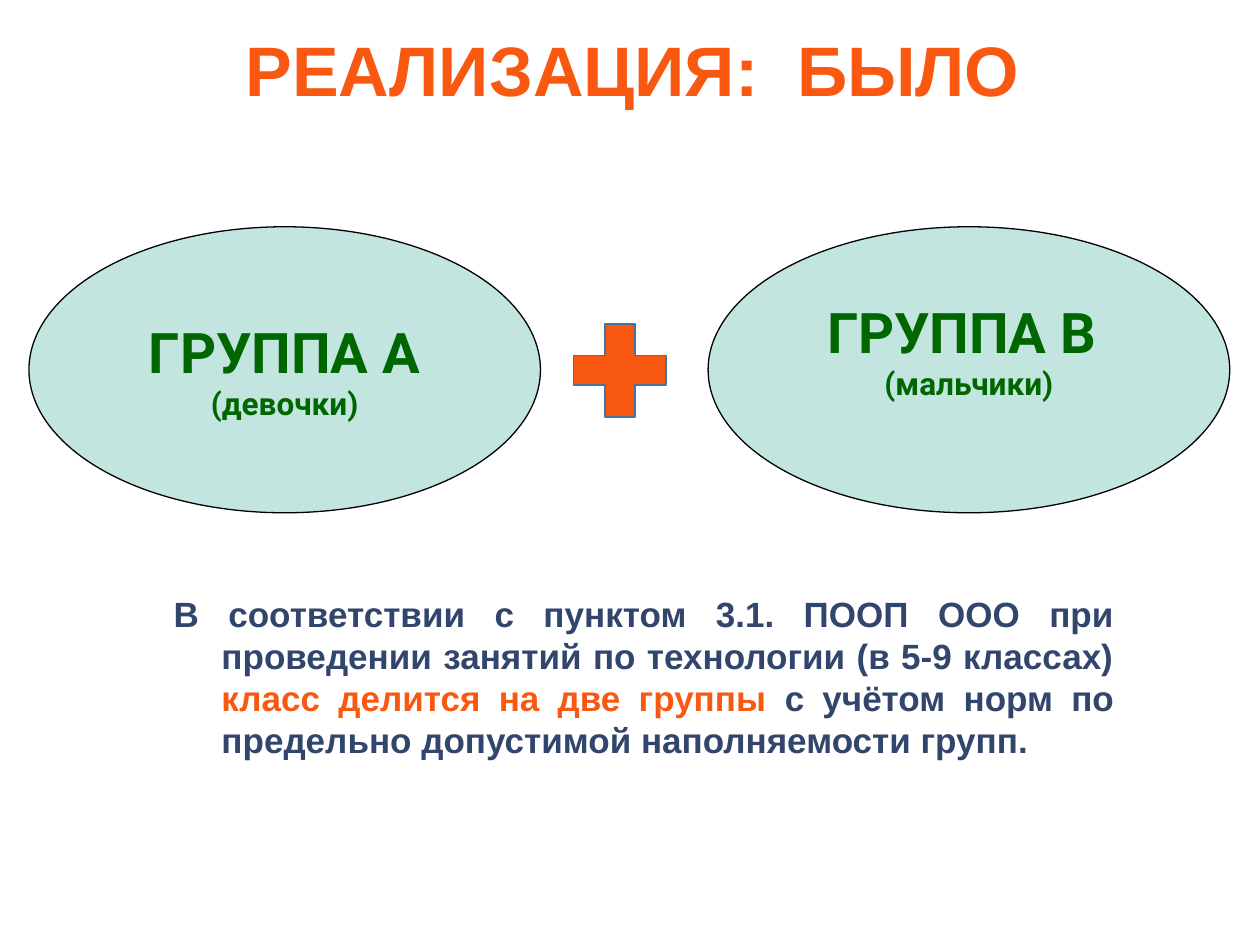
from dataclasses import dataclass

from pptx import Presentation
from pptx.dml.color import RGBColor
from pptx.enum.shapes import MSO_SHAPE
from pptx.enum.text import MSO_ANCHOR, PP_ALIGN
from pptx.oxml.ns import qn
from pptx.util import Inches, Pt
from lxml import etree

ELLIPSE = MSO_SHAPE.OVAL
PLUS = MSO_SHAPE.MATH_PLUS
TOP, MIDDLE = MSO_ANCHOR.TOP, MSO_ANCHOR.MIDDLE
CENTER, JUSTIFY = PP_ALIGN.CENTER, PP_ALIGN.JUSTIFY


@dataclass(frozen=True)
class Theme:
    orange: str = "F85810"
    navy: str = "32456C"
    green: str = "006600"
    teal: str = "06947C"
    black: str = "000000"
    plus_outline: str = "43739E"
    text_font: str = "Arial"
    group_font: str = "Roboto"
    title_size: int = 40
    group_size: int = 32
    note_size: int = 18
    body_size: int = 20


@dataclass(frozen=True)
class Group:
    name: str
    members: str
    left: float
    width: float
    bottom_inset: float


THEME = Theme()
GROUP_TOP, GROUP_HEIGHT = 1.8, 2.27
GROUPS = [
    Group("ГРУППА А", "(девочки)", 0.23, 4.06, 0.05),
    Group("ГРУППА В ", "(мальчики)", 5.62, 4.14, 0.37),
]
RULE_TEXT = [
    ("В соответствии с пунктом 3.1. ПООП ООО при проведении занятий "
     "по технологии (в 5-9 классах) ", THEME.navy),
    ("класс делится на две группы ", THEME.orange),
    ("с учётом норм по предельно допустимой наполняемости групп.", THEME.navy),
]


def add_run(paragraph, text: str, *, size: int, color: str, font: str) -> None:
    run = paragraph.add_run()
    run.text = text
    run.font.name = font
    run.font.size = Pt(size)
    run.font.bold = True
    run.font.color.rgb = RGBColor.from_string(color)


def add_shape(slide, kind, left: float, top: float, width: float, height: float,
              *, fill: str, line: str, line_width: float, opacity: int = 100):
    shape = slide.shapes.add_shape(
        kind, Inches(left), Inches(top), Inches(width), Inches(height))
    shape.shadow.inherit = False
    shape.fill.solid()
    shape.fill.fore_color.rgb = RGBColor.from_string(fill)
    shape.line.color.rgb = RGBColor.from_string(line)
    shape.line.width = Pt(line_width)
    if opacity < 100:
        color = shape.fill._xPr.find(qn("a:solidFill"))[0]
        etree.SubElement(color, qn("a:alpha"), val=str(opacity * 1000))
    return shape


def add_group(slide, group: Group) -> None:
    shape = add_shape(slide, ELLIPSE, group.left, GROUP_TOP, group.width, GROUP_HEIGHT,
                      fill=THEME.teal, line=THEME.black, line_width=0.75, opacity=24)
    frame = shape.text_frame
    frame.word_wrap = False
    frame.vertical_anchor = MIDDLE
    frame.margin_bottom = Inches(group.bottom_inset)
    name, members = frame.paragraphs[0], frame.add_paragraph()
    for paragraph, text, size in ((name, group.name, THEME.group_size),
                                  (members, group.members, THEME.note_size)):
        paragraph.alignment = CENTER
        add_run(paragraph, text, size=size, color=THEME.green, font=THEME.group_font)


def add_text(slide, left: float, top: float, width: float, height: float,
             parts: list[tuple[str, str]], *, size: int, alignment, anchor):
    box = slide.shapes.add_textbox(
        Inches(left), Inches(top), Inches(width), Inches(height))
    frame = box.text_frame
    frame.word_wrap = True
    frame.vertical_anchor = anchor
    paragraph = frame.paragraphs[0]
    paragraph.alignment = alignment
    for text, color in parts:
        add_run(paragraph, text, size=size, color=color, font=THEME.text_font)
    return paragraph


def main() -> None:
    presentation = Presentation()
    presentation.slide_width, presentation.slide_height = Inches(10), Inches(7.5)
    slide = presentation.slides.add_slide(presentation.slide_layouts[6])

    # Two groups joined by a plus sign
    for group in GROUPS:
        add_group(slide, group)
    add_shape(slide, PLUS, 4.42, 2.44, 1, 1,
              fill=THEME.orange, line=THEME.plus_outline, line_width=1)

    # Rule with a hanging indent
    rule = add_text(slide, 1.28, 4.65, 7.66, 1.64, RULE_TEXT,
                    size=THEME.body_size, alignment=JUSTIFY, anchor=TOP)
    properties = rule._p.get_or_add_pPr()
    properties.set("marL", str(Inches(0.38)))
    properties.set("indent", str(Inches(-0.38)))

    # Title
    title = add_text(slide, 0.52, 0.17, 9, 0.83, [("РЕАЛИЗАЦИЯ:  БЫЛО", THEME.orange)],
                     size=THEME.title_size, alignment=CENTER, anchor=MIDDLE)
    title.line_spacing = 0.9

    presentation.save("out.pptx")


if __name__ == "__main__":
    main()
